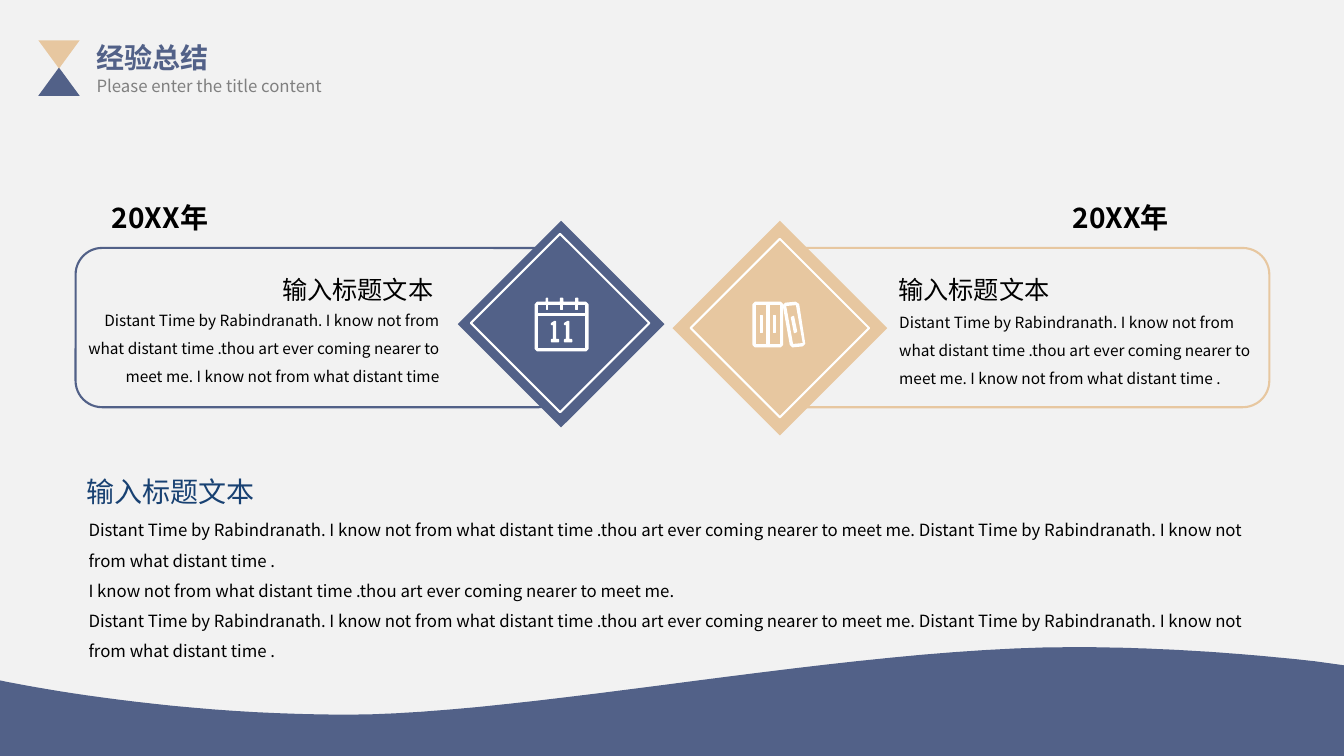
from lxml.etree import SubElement
from pptx import Presentation
from pptx.dml.color import RGBColor
from pptx.enum.shapes import MSO_SHAPE
from pptx.enum.text import MSO_AUTO_SIZE, PP_ALIGN
from pptx.oxml.ns import qn
from pptx.util import Pt

PX = 9144
FINE = 10
WIDE, HIGH = 1333, 750
FONT = "Noto Sans CJK SC"
BLUE = RGBColor(0x52, 0x61, 0x88)
SAND = RGBColor(0xE7, 0xC7, 0xA0)
NAVY = RGBColor(0x18, 0x41, 0x72)
GREY = RGBColor(0x80, 0x80, 0x80)
PALE = RGBColor(0xF2, 0xF2, 0xF2)
BLACK = RGBColor(0, 0, 0)
WHITE = RGBColor(0xFF, 0xFF, 0xFF)
JUST, LEFT, RIGHT = PP_ALIGN.JUSTIFY, PP_ALIGN.LEFT, PP_ALIGN.RIGHT

HEAD = "输入标题文本"
OPEN = "Distant Time by Rabindranath. I know not from"
MEET = "what distant time .thou art ever coming nearer to meet me."
TAIL = "I know not from what distant time"
CARD = f"{OPEN} {MEET} {TAIL}"
LONG = f"{OPEN} {MEET} Distant Time by Rabindranath. {TAIL} ."
MID = f"I know not from {MEET}"


def curve(start, one, two, end, steps=24):
    spots = []
    for step in range(steps + 1):
        t = step / steps
        parts = ((1 - t) ** 3, 3 * t * (1 - t) ** 2, 3 * t * t * (1 - t), t ** 3)
        spots.append(tuple(sum(p * q for p, q in zip(parts, axis))
                           for axis in zip(start, one, two, end)))
    return spots


def rect(left, top, right, base):
    return [(left, top), (right, top), (right, base), (left, base)]


def bevel(left, top, right, base, cut=2):
    return [(left, top + cut), (left + cut, top), (right - cut, top),
            (right, top + cut), (right, base - cut), (right - cut, base),
            (left + cut, base), (left, base - cut)]


def pins(edge, tip):
    spots = []
    for left, right in ((542, 543), (556, 558), (571, 573)):
        spots += [(left, edge), (left, tip), (right, tip), (right, edge)]
    return spots


class Deck:
    def __init__(self):
        self.show = Presentation()
        self.show.slide_width, self.show.slide_height = WIDE * PX, HIGH * PX
        self.page = self.show.slides.add_slide(self.show.slide_layouts[6])
        back = self.page.background.fill
        back.solid()
        back.fore_color.rgb = PALE

    def paint(self, shape, fill, line, width):
        shape.shadow.inherit = False
        for part, tint in ((shape.fill, fill), (shape.line.fill, line)):
            if tint is None:
                part.background()
            else:
                part.solid()
                part.fore_color.rgb = tint
        if line is not None:
            shape.line.width = Pt(width)

    def shape(self, kind, box, fill=None, line=None, turn=0):
        shape = self.page.shapes.add_shape(kind, *(n * PX for n in box))
        shape.rotation = turn
        self.paint(shape, fill, line, 1.5)

    def free(self, rings, fill=WHITE, line=WHITE):
        rings = [[(x * FINE, y * FINE) for x, y in ring] for ring in rings]
        form = self.page.shapes.build_freeform(*rings[0][0], scale=PX / FINE)
        for count, ring in enumerate(rings):
            if count:
                form.move_to(*ring[0])
            form.add_line_segments(ring[1:], close=True)
        self.paint(form.convert_to_shape(), fill, line, 1)

    def text(self, box, lines, size, tint=BLACK, bold=False, align=JUST, lead=1):
        frame = self.page.shapes.add_textbox(*(n * PX for n in box)).text_frame
        frame.word_wrap = True
        frame.auto_size = MSO_AUTO_SIZE.SHAPE_TO_FIT_TEXT
        for count, line in enumerate(lines):
            para = frame.add_paragraph() if count else frame.paragraphs[0]
            run = para.add_run()
            run.text = line
            style = {para: {"alignment": align, "line_spacing": lead},
                     run.font: {"name": FONT, "size": Pt(size), "bold": bold}}
            for item, values in style.items():
                for name, value in values.items():
                    setattr(item, name, value)
            run.font.color.rgb = tint
            SubElement(run.font._element, qn("a:ea")).set("typeface", FONT)

    def gem(self, box, edge, tint):
        left, top, size = box
        self.shape(MSO_SHAPE.DIAMOND, (left, top, size, size), tint)
        self.shape(MSO_SHAPE.DIAMOND, (left + edge, top + edge, 177, 177), line=WHITE)

    def books(self):
        self.free([rect(754, 313, 756, 330)])
        self.free([rect(767, 313, 769, 330)])
        self.free([[(785, 315), (787, 314), (790, 329), (788, 330)]])
        self.free([bevel(747, 300, 776, 344), rect(749, 302, 760, 342),
                   rect(763, 302, 774, 342)])
        self.free([[(777, 303), (779, 301), (789, 300), (792, 302), (798, 341),
                    (796, 343), (786, 344), (784, 342)],
                   [(779, 303), (790, 302), (797, 341), (786, 342)]])

    def dates(self):
        rim = bevel(531, 300, 583, 348)
        top = rect(533, 302, 581, 311)
        self.free([rim[:2] + pins(300, 296) + rim[2:],
                   top[:1] + pins(302, 307) + top[1:],
                   rect(533, 313, 581, 346)])
        digit = [(0, 339), (7, 339), (7, 337), (4, 337), (4, 319), (3, 319),
                 (0, 321), (0, 322), (2, 322), (2, 337), (0, 337)]
        for left in (547, 560):
            self.free([[(left + x, y) for x, y in digit]])


def main():
    deck = Deck()
    crest = (1065, 642)
    wave = curve(crest, (840, 642), (528, 709), (343, 709))
    wave += curve((343, 709), (157, 709), (0, 675), (0, 675))[1:]
    wave += [(0, HIGH), (WIDE, HIGH), (WIDE, 660)]
    wave += curve((1304, 656), (1232, 648), (1149, 642), crest)
    deck.free([wave], BLUE, None)

    for top, tint, turn in ((67, BLUE, 0), (40, SAND, 180)):
        deck.shape(MSO_SHAPE.ISOSCELES_TRIANGLE, (38, top, 41, 28), tint, turn=turn)
    deck.text((86, 35, 179, 43), ["经验总结"], 20, BLUE, True)
    deck.text((86, 70, 264, 30), ["Please enter the title content"], 12, GREY)

    for left, tint in ((773, SAND), (75, BLUE)):
        deck.shape(MSO_SHAPE.ROUNDED_RECTANGLE, (left, 246, 486, 158), line=tint)
    for left in (101, 1054):
        deck.text((left, 194, 179, 43), ["20XX年"], 20, bold=True)

    deck.gem((667, 219, 213), 18, SAND)
    deck.books()
    deck.gem((454, 219, 205), 13, BLUE)
    deck.dates()

    cards = ((881, 882, 297, CARD + " .", LEFT), (270, 75, 295, CARD, RIGHT))
    for head, left, top, words, align in cards:
        deck.text((head, 267, 178, 40), [HEAD], 18)
        deck.text((left, top, 371, 93), [words], 11, align=align, lead=1.5)
    deck.text((76, 466, 206, 43), [HEAD], 20, NAVY)
    deck.text((78, 501, 1177, 160), [LONG, MID, LONG], 12, align=LEFT, lead=1.5)
    deck.show.save("out.pptx")


if __name__ == "__main__":
    main()
